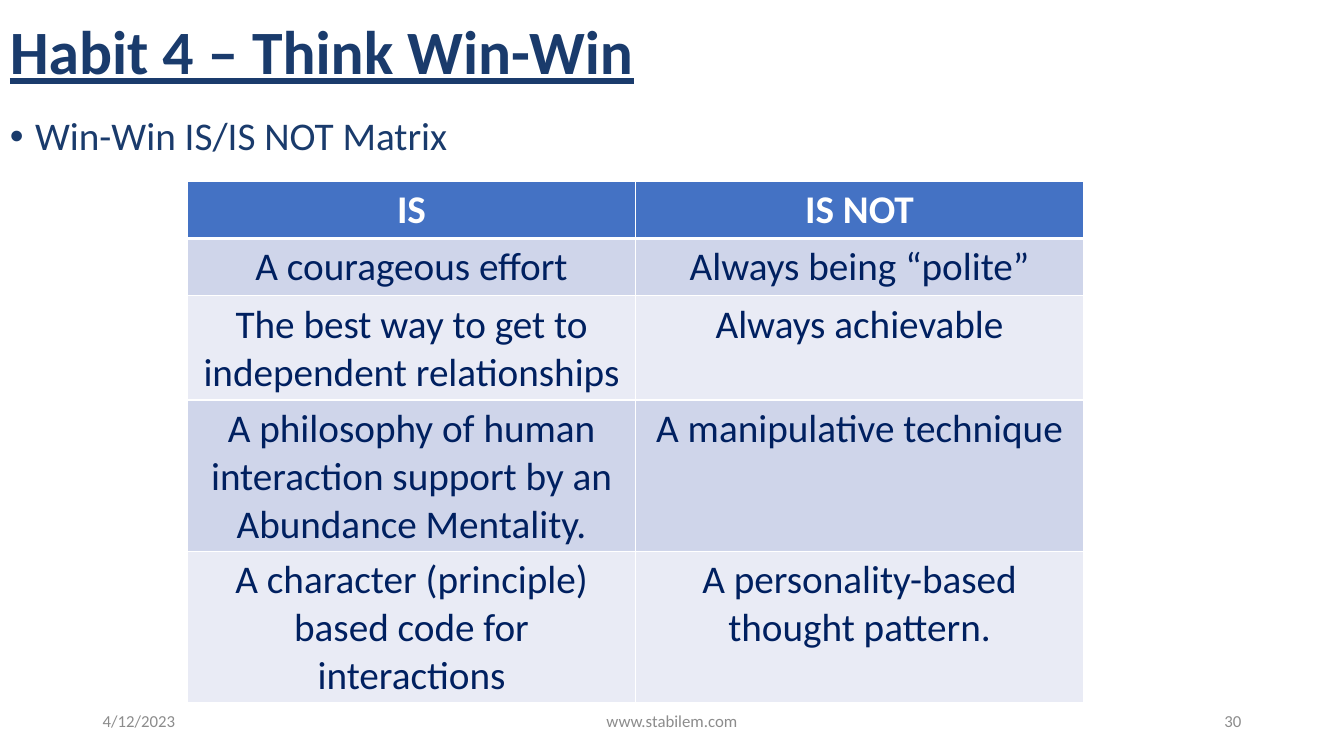
"""Build the Win-Win IS / IS NOT matrix slide."""
from lxml.etree import SubElement
from pptx import Presentation
from pptx.dml.color import RGBColor
from pptx.enum.text import MSO_ANCHOR, PP_ALIGN
from pptx.oxml.ns import qn
from pptx.util import Inches, Pt

THEME = {
    "font": "Calibri", "title": 44, "body": 28, "footer": 12,
    "navy": "1A3B6C", "ink": "002060", "white": "FFFFFF", "grey": "8C8C8C",
    "header": "4472C4", "bands": ("CFD5EA", "E9EBF5"),
}
W, H = 13.33, 7.5
FOOT_TOP, FOOT_H, MARGIN = 6.95, 0.4, 0.92
COL_W, ROW_H = W / 3, 0.41
ROWS = [
    ("IS", "IS NOT"),
    ("A courageous effort", "Always being “polite”"),
    ("The best way to get to independent relationships", "Always achievable"),
    ("A philosophy of human interaction support by an Abundance Mentality.",
     "A manipulative technique"),
    ("A character (principle) based code for interactions",
     "A personality-based thought pattern."),
]


def write(p, text, size, color, align=PP_ALIGN.LEFT, bold=False):
    p.alignment = align
    r = p.add_run()
    r.text = text
    r.font.name, r.font.size, r.font.bold = THEME["font"], Pt(THEME[size]), bold
    r.font.color.rgb = RGBColor.from_string(THEME[color])
    return r


def add_box(left, top, width, height, anchor=MSO_ANCHOR.MIDDLE):
    tf = s.shapes.add_textbox(*map(Inches, (left, top, width, height))).text_frame
    tf.word_wrap = True
    tf.vertical_anchor = anchor
    return tf.paragraphs[0]


prs = Presentation()
prs.slide_width, prs.slide_height = Inches(W), Inches(H)
s = prs.slides.add_slide(prs.slide_layouts[6])

p = add_box(0, 0, 10.97, 1.09)
p.line_spacing = 0.9
write(p, "Habit 4 – Think Win-Win", "title", "navy", bold=True).font.underline = True

p = add_box(0, 1.11, W, FOOT_TOP - 1.11, MSO_ANCHOR.TOP)
pPr = p._p.get_or_add_pPr()
pPr.set("marL", str(Inches(0.25)))
pPr.set("indent", str(-Inches(0.25)))
SubElement(pPr, qn("a:buFont"), typeface="Arial")
SubElement(pPr, qn("a:buChar"), char="•")
p.line_spacing = 0.9
write(p, "Win-Win IS/IS NOT Matrix", "body", "navy")

frame = s.shapes.add_table(len(ROWS), 2, Inches(1.86), Inches(1.8),
                           Inches(2 * COL_W), Inches(len(ROWS) * ROW_H))
table = frame.table
for i, row in enumerate(ROWS):
    table.rows[i].height = Inches(ROW_H)
    for j, text in enumerate(row):
        cell = table.cell(i, j)
        tcPr = cell._tc.get_or_add_tcPr()
        for side in "LRTB":
            thick = (i, side) in ((0, "B"), (1, "T"))
            ln = SubElement(tcPr, qn("a:ln" + side), w=str(Pt(3 if thick else 1)))
            SubElement(SubElement(ln, qn("a:solidFill")), qn("a:srgbClr"),
                       val=THEME["white"])
        cell.fill.solid()
        fill = THEME["bands"][(i - 1) % 2] if i else THEME["header"]
        cell.fill.fore_color.rgb = RGBColor.from_string(fill)
        write(cell.text_frame.paragraphs[0], text, "body",
              "ink" if i else "white", PP_ALIGN.CENTER, bold=i == 0)
for col in table.columns:
    col.width = Inches(COL_W)
frame.height = Inches(5.17)

for text, left, width, align in (
    ("4/12/2023", MARGIN, 3, PP_ALIGN.LEFT),
    ("www.stabilem.com", (W - 4.5) / 2, 4.5, PP_ALIGN.CENTER),
    ("30", W - MARGIN - 3, 3, PP_ALIGN.RIGHT),
):
    write(add_box(left, FOOT_TOP, width, FOOT_H), text, "footer", "grey", align)

prs.save("out.pptx")
